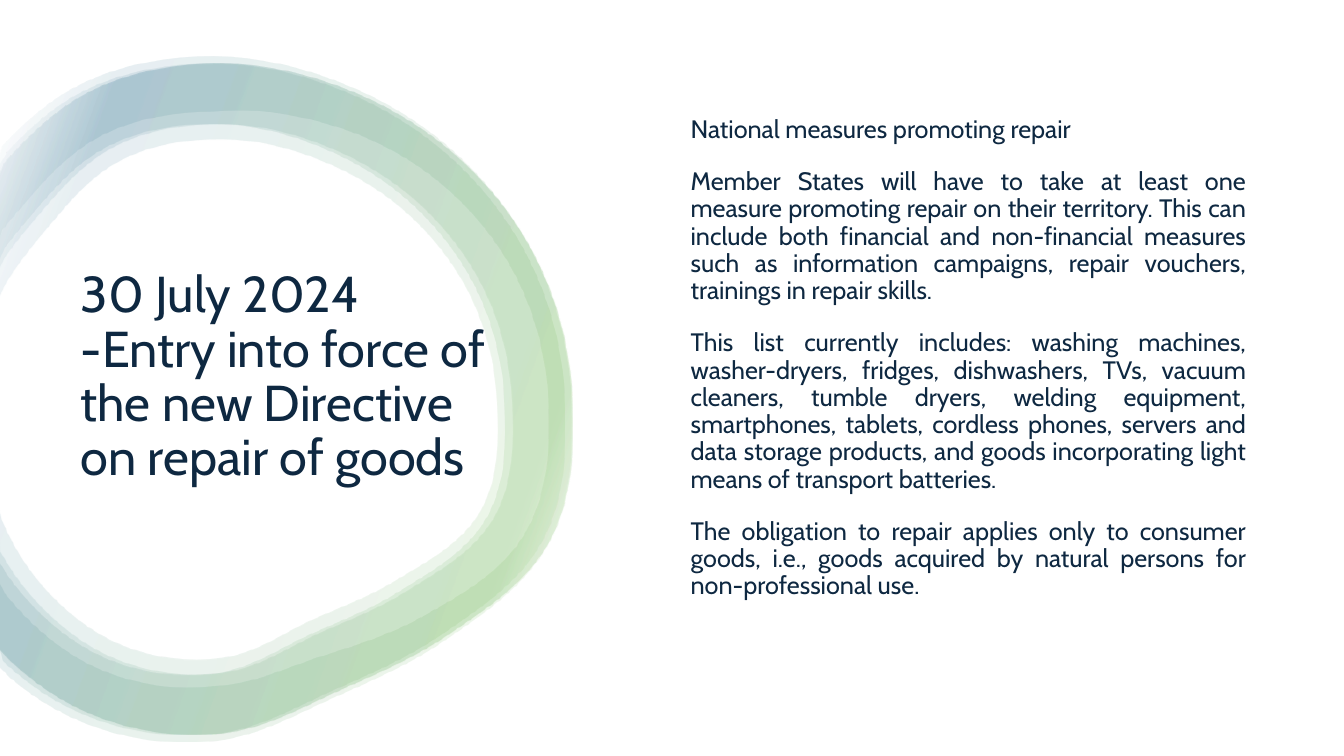
"""Build a slide on the repair directive, with a soft ring behind the title."""
from collections import namedtuple
from math import cos, radians, sin

from pptx import Presentation
from pptx.dml.color import RGBColor
from pptx.enum.text import MSO_ANCHOR, MSO_AUTO_SIZE, PP_ALIGN
from pptx.oxml import parse_xml
from pptx.oxml.ns import nsdecls, qn
from pptx.util import Inches, Pt

NAVY = RGBColor(0x0E, 0x28, 0x41)
WHITE = RGBColor(0xFF, 0xFF, 0xFF)
GREEN = RGBColor(0x4E, 0xA7, 0x2E)
BLUE = RGBColor(0x15, 0x60, 0x82)
FONT = "Cabin"

TITLE = "30 July 2024 -Entry into force of the new Directive on repair of goods"
BODY = [
    "National measures promoting repair",
    "Member States will have to take at least one measure promoting repair on "
    "their territory. This can include both financial and non-financial measures "
    "such as information campaigns, repair vouchers, trainings in repair skills.",
    "This list currently includes: washing machines, washer-dryers, fridges, "
    "dishwashers, TVs, vacuum cleaners, tumble dryers, welding equipment, "
    "smartphones, tablets, cordless phones, servers and data storage products, "
    "and goods incorporating light means of transport batteries.",
    "The obligation to repair applies only to consumer goods, i.e., goods "
    "acquired by natural persons for non-professional use.",
]
TITLE_BOX = (0.7, 1.36, 4.22, 4.78)
BODY_BOX = (6.75, 0.88, 5.71, 5.35)

CENTER = (2.2, 4.0)
FIRST, TURN, STEPS = -157.5, 22.5, 8
RADII = [3.2, 3.2, 3.36, 3.37, 3.35, 3.38, 3.43, 3.47,
         3.52, 3.21, 3.07, 3.27, 3.34, 3.28, 3.2]

Ring = namedtuple("Ring", "shift grow width pinch")
RINGS = [
    Ring(shift=-0.08, grow=0.07, width=0.55, pinch=0.32),
    Ring(shift=-0.08, grow=0, width=0.6, pinch=0),
    Ring(shift=0, grow=0, width=0.75, pinch=0),
    Ring(shift=0, grow=0, width=0.6, pinch=0),
]
STOPS = [(2, WHITE), (16, GREEN), (85, BLUE), (100, WHITE)]
OPACITY, SLANT = 10, 200


def blend(a, b, c, d, t):
    """Return the smooth (Catmull-Rom) value between b and c."""
    return b + t / 2 * (c - a + t * (2 * a - 5 * b + 4 * c - d
                                     + t * (3 * (b - c) + d - a)))


def sweep():
    """Yield each angle of the arc with its smooth outer radius."""
    padded = [RADII[0], *RADII, RADII[-1]]
    for i in range(len(RADII) - 1):
        for step in range(STEPS):
            t = step / STEPS
            yield radians(FIRST + TURN * (i + t)), blend(*padded[i:i + 4], t)


def spot(angle, radius, shift):
    """Turn an angle and radius into a point, held at the slide's left edge."""
    x = CENTER[0] + shift + radius * cos(angle)
    y = CENTER[1] + radius * sin(angle)
    return Inches(max(x, 0)), Inches(y)


def outline(ring):
    """Go round the outer edge, then back along the inner edge."""
    outer, inner = [], []
    for angle, radius in sweep():
        edge = radius + ring.grow
        band = ring.width - ring.pinch * max(cos(angle), 0)
        outer.append(spot(angle, edge, ring.shift))
        inner.append(spot(angle, edge - band, ring.shift))
    return outer + inner[::-1]


def tint(shape):
    """Give a shape the see-through gradient."""
    stops = "".join(
        f'<a:gs pos="{pos * 1000}"><a:srgbClr val="{color}">'
        f'<a:alpha val="{OPACITY * 1000}"/></a:srgbClr></a:gs>' for pos, color in STOPS)
    shape.fill.background()
    props = shape._element.spPr
    props.replace(props.find(qn("a:noFill")), parse_xml(
        f'<a:gradFill {nsdecls("a")} rotWithShape="1"><a:gsLst>{stops}</a:gsLst>'
        f'<a:lin ang="{SLANT * 60000}" scaled="0"/></a:gradFill>'))


def add_ring(slide, ring):
    """Draw one ring behind the title."""
    start, *rest = outline(ring)
    pen = slide.shapes.build_freeform(*start)
    pen.add_line_segments(rest, close=True)
    shape = pen.convert_to_shape()
    shape.shadow.inherit = False
    shape.line.fill.background()
    tint(shape)
    slide.shapes.title._element.addprevious(shape._element)


def fill_text(shape, box, lines, size, align):
    """Place a placeholder and set its text."""
    shape.left, shape.top, shape.width, shape.height = map(Inches, box)
    frame = shape.text_frame
    frame.text = "\n".join(lines)
    frame.word_wrap = True
    frame.auto_size = MSO_AUTO_SIZE.NONE
    frame.vertical_anchor = MSO_ANCHOR.MIDDLE
    for para in frame.paragraphs:
        para.alignment = align
        para.line_spacing = 0.9
        para.font.name = FONT
        para.font.size = Pt(size)
        para.font.color.rgb = NAVY


def drop_bullet(para):
    """Remove the bullet and indent of a paragraph."""
    props = para._p.get_or_add_pPr()
    props.set("marL", "0")
    props.set("indent", "0")
    props.find(qn("a:defRPr")).addprevious(parse_xml(f'<a:buNone {nsdecls("a")}/>'))


def main():
    """Build and save the slide."""
    deck = Presentation()
    deck.slide_width, deck.slide_height = Inches(13.33), Inches(7.5)
    slide = deck.slides.add_slide(deck.slide_layouts[1])
    for ring in RINGS:
        add_ring(slide, ring)
    body = slide.placeholders[1]
    fill_text(slide.shapes.title, TITLE_BOX, [TITLE], 36, PP_ALIGN.LEFT)
    fill_text(body, BODY_BOX, BODY, 18, PP_ALIGN.JUSTIFY)
    for para in body.text_frame.paragraphs:
        para.space_before, para.space_after = Pt(10), Pt(8)
        drop_bullet(para)
    deck.save("out.pptx")


if __name__ == "__main__":
    main()
